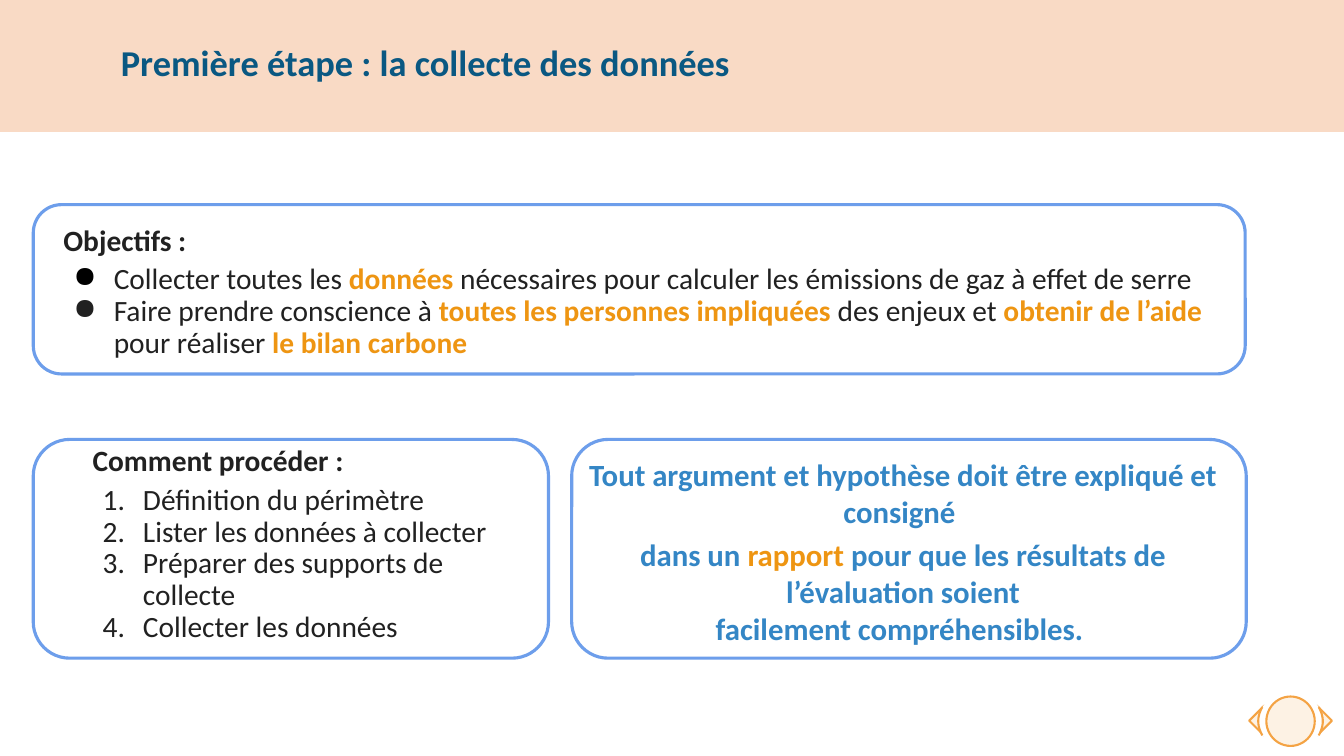
from lxml import etree
from pptx import Presentation
from pptx.dml.color import RGBColor
from pptx.enum import shapes, text
from pptx.oxml import ns
from pptx.util import Inches, Pt

FONT = "Calibri"
WHITE = RGBColor(0xFF, 0xFF, 0xFF)
BLACK = RGBColor(0, 0, 0)
INK = RGBColor(0x21, 0x21, 0x21)
NAVY = RGBColor(0x0A, 0x58, 0x82)
BLUE = RGBColor(0x34, 0x86, 0xC5)
AMBER = RGBColor(0xEE, 0x95, 0x12)
FRAME = RGBColor(0x6D, 0x9E, 0xEB)
PEACH = RGBColor(0xED, 0x7D, 0x31)
ORANGE = RGBColor(0xF4, 0xA3, 0x44)
SHAPE = shapes.MSO_SHAPE


def add_shape(page, kind, box, fill=None, opacity=100, line=None, width=1.5):
    shape = page.shapes.add_shape(kind, *map(Inches, box))
    shape.shadow.inherit = False
    if fill is None:
        shape.fill.background()
    else:
        shape.fill.solid()
        shape.fill.fore_color.rgb = fill
        if opacity < 100:
            color = shape.fill._xPr.find(".//" + ns.qn("a:srgbClr"))
            etree.SubElement(color, ns.qn("a:alpha"), val=str(opacity * 1000))
    if line is None:
        shape.line.fill.background()
    else:
        shape.line.color.rgb = line
        shape.line.width = Pt(width)
    return shape


def add_text(page, box, inset=0.1, anchor=text.MSO_ANCHOR.TOP):
    frame = page.shapes.add_textbox(*map(Inches, box)).text_frame
    frame.word_wrap = True
    frame.vertical_anchor = anchor
    frame.margin_left = frame.margin_right = Inches(0.1)
    frame.margin_top = frame.margin_bottom = Inches(inset)
    return frame


def set_bullet(para, tag, color, **attributes):
    props = para._p.get_or_add_pPr()
    props.set("marL", str(Inches(0.5)))
    props.set("indent", str(-Inches(0.4)))
    tint = etree.SubElement(props, ns.qn("a:buClr"))
    etree.SubElement(tint, ns.qn("a:srgbClr"), val=str(color))
    etree.SubElement(props, ns.qn(tag), **attributes)


def add_para(frame, spans, size, bullet=None, before=0, spacing=None, align=None):
    first = not frame.paragraphs[0].runs
    para = frame.paragraphs[0] if first else frame.add_paragraph()
    if bullet:
        tag, color, attributes = bullet
        set_bullet(para, tag, color, **attributes)
    para.font.name = FONT
    para.font.size = Pt(size)
    para.space_before = Pt(before)
    para.line_spacing = spacing
    para.alignment = align
    if len({(color, bold) for _, color, bold in spans}) == 1:
        para.font.color.rgb, para.font.bold = spans[0][1:]
        para.add_run().text = spans[0][0]
        return
    for words, color, bold in spans:
        for index, part in enumerate(words.split("\n")):
            if index:
                para.add_line_break()
            span = para.add_run()
            span.text = part
            span.font.color.rgb = color
            span.font.bold = bold


def add_header(page, box):
    left, top, width, height = box
    add_shape(page, SHAPE.RECTANGLE, box, PEACH, 28)
    frame = add_text(page, (left + 1.1, top + 0.11, 10.01, 1.07), 0.05, text.MSO_ANCHOR.MIDDLE)
    add_para(frame, [("Première étape : la collecte des données", NAVY, True)], 26, spacing=0.9)


def add_frame(page, box):
    add_shape(page, SHAPE.ROUNDED_RECTANGLE, box, line=FRAME, width=2.25)


def add_list(page, box, heading, items):
    frame = add_text(page, box)
    add_para(frame, [(heading, INK, True)], 21, spacing=0.9)
    for index, (spans, bullet) in enumerate(items):
        add_para(frame, spans, 21, bullet, 0 if index else 4.8, 0.9)


def add_goals(page, box):
    left, top, width, height = box
    add_frame(page, box)
    goals = [
        [("Collecter toutes les ", INK, False),
         ("données ", AMBER, True),
         ("nécessaires pour calculer les émissions de gaz à effet de serre", INK, False)],
        [("Faire prendre conscience à ", INK, False),
         ("toutes les personnes impliquées ", AMBER, True),
         ("des enjeux et ", INK, False),
         ("obtenir de l’aide ", AMBER, True),
         ("pour réaliser ", INK, False),
         ("le bilan carbone", AMBER, True)],
    ]
    items = [(spans, ("a:buChar", color, {"char": "●"}))
             for spans, color in zip(goals, (BLACK, INK))]
    add_list(page, (left + 0.2, top + 0.11, 11.89, 1.54), "Objectifs :", items)


def add_steps(page, box):
    left, top, width, height = box
    add_frame(page, box)
    steps = ["Définition du périmètre", "Lister les données à collecter",
             "Préparer des supports de collecte", "Collecter les données"]
    number = ("a:buAutoNum", INK, {"type": "arabicPeriod"})
    items = [([(step, INK, False)], number) for step in steps]
    add_list(page, (left + 0.49, top - 0.03, 4.6, 2.18), "Comment procéder :", items)


def add_advice(page, box):
    left, top, width, height = box
    add_frame(page, box)
    frame = add_text(page, (left, top + 0.06, 6.57, 2.12))
    center = text.PP_ALIGN.CENTER
    add_para(frame, [("Tout argument et hypothèse doit être expliqué et consigné ", BLUE, True)],
             22, align=center)
    add_para(frame, [("dans un ", BLUE, True),
                     ("rapport ", AMBER, True),
                     ("pour que les résultats de l’évaluation soient\nfacilement compréhensibles. ",
                      BLUE, True)],
             22, before=4.4, align=center)


def add_navigation(page, box):
    left, top, width, height = box
    middle, center = left + width / 2, top + height / 2
    for side in (-1, 1):
        arrow = add_shape(page, SHAPE.STRIPED_RIGHT_ARROW,
                          (middle + side * 0.25 - 0.16, top + 0.09, 0.32, 0.3), ORANGE, 14, ORANGE)
        arrow.rotation = 0 if side > 0 else 180
        add_shape(page, SHAPE.OVAL, (left + side * 0.07, top, width, height), WHITE, line=WHITE)
        steps = [step / 6 for step in range(-6, 7)]
        points = [(Inches(middle + side * (0.32 - 0.04 * step ** 2)), Inches(center + 0.14 * step))
                  for step in steps]
        builder = page.shapes.build_freeform(*points[0])
        builder.add_line_segments(points[1:], close=False)
        arc = builder.convert_to_shape()
        arc.shadow.inherit = False
        arc.fill.background()
        arc.line.color.rgb = ORANGE
        arc.line.width = Pt(1.5)
    add_shape(page, SHAPE.OVAL, box, ORANGE, 14, ORANGE)


def main():
    deck = Presentation()
    deck.slide_width, deck.slide_height = Inches(13.33), Inches(7.5)
    page = deck.slides.add_slide(deck.slide_layouts[6])
    add_navigation(page, (12.56, 6.91, 0.48, 0.49))
    add_header(page, (0, 0, 13.33, 1.31))
    add_goals(page, (0.33, 2.03, 12.02, 1.68))
    add_steps(page, (0.33, 4.36, 5.11, 2.17))
    add_advice(page, (5.67, 4.36, 6.69, 2.17))
    deck.save("out.pptx")


if __name__ == "__main__":
    main()
